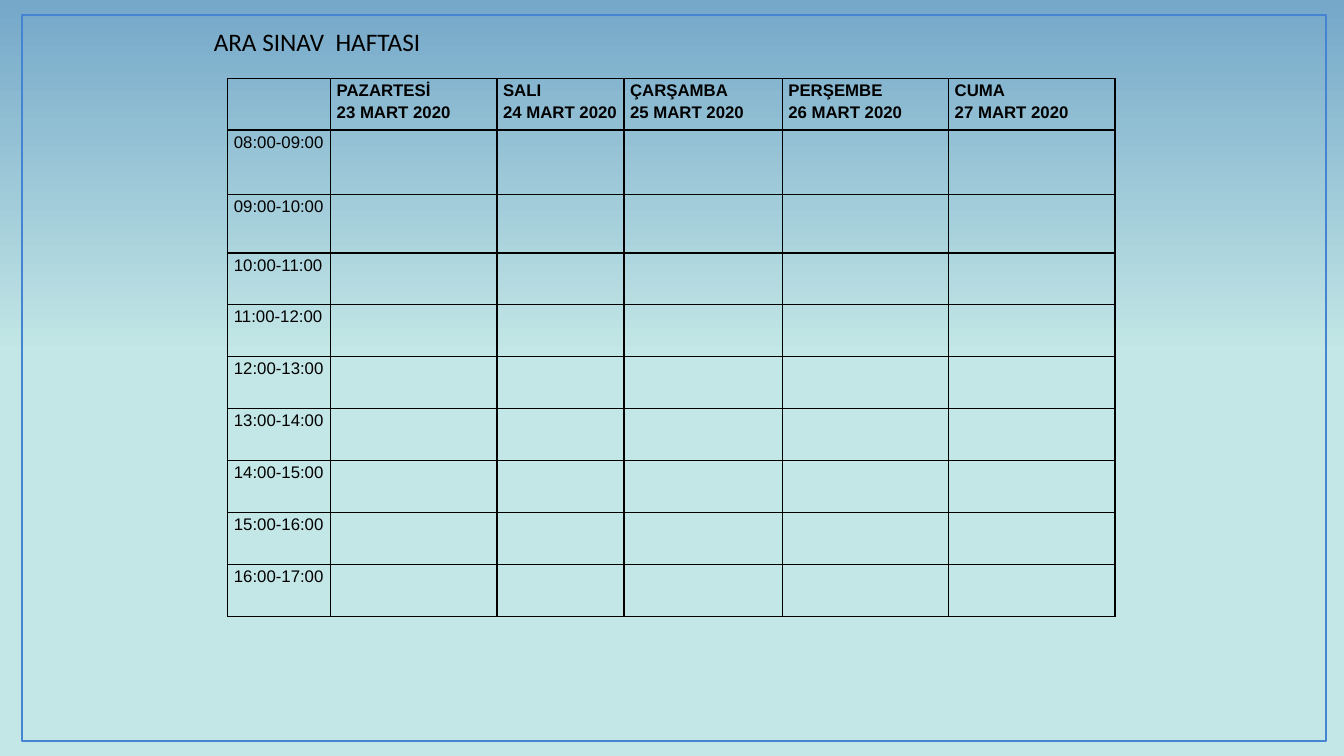
from pptx import Presentation
from pptx.dml.color import RGBColor
from pptx.enum.shapes import MSO_SHAPE as Shape
from pptx.enum.text import MSO_ANCHOR as Anchor, MSO_AUTO_SIZE as Fit, PP_ALIGN as Align
from pptx.oxml import parse_xml
from pptx.oxml.ns import nsdecls
from pptx.util import Inches, Pt

DAYS = ["PAZARTESİ", "SALI", "ÇARŞAMBA", "PERŞEMBE", "CUMA"]
FIRST_DAY = 23
HOURS = range(8, 17)
COLS = [1.02, 1.65, 1.26, 1.57, 1.65, 1.65]
ROWS = [0.51, 0.64, 0.58] + [0.515] * 7


def rgb(code):
    return RGBColor.from_string(code)


def add_run(para, text, font, size, bold=False):
    run = para.add_run()
    run.text = text
    run.font.name = font
    run.font.size = Pt(size)
    run.font.bold = bold
    run.font.color.rgb = rgb("000000")


def paint_back(slide):
    fill = slide.background.fill
    fill.gradient()
    fill.gradient_angle = 90
    stops = [(0.53, "C3E7E6"), (1, "75A8C9")]
    for stop, (place, code) in zip(fill.gradient_stops, stops):
        stop.position = place
        stop.color.rgb = rgb(code)


def add_frame(slide):
    frame = slide.shapes.add_shape(
        Shape.RECTANGLE, Inches(0.22), Inches(0.15), Inches(12.93), Inches(7.2))
    frame.shadow.inherit = False
    frame.fill.background()
    frame.line.color.rgb = rgb("4584D3")
    frame.line.width = Pt(1.5)


def set_title(slide, text):
    title = slide.shapes.title
    title.left, title.top = Inches(2.02), Inches(0.21)
    title.width, title.height = Inches(2.27), Inches(0.4)
    frame = title.text_frame
    frame.word_wrap = False
    frame.auto_size = Fit.NONE
    frame.vertical_anchor = Anchor.TOP
    para = frame.paragraphs[0]
    para.alignment = Align.LEFT
    add_run(para, text, "Calibri", 18)


def set_borders(cell):
    props = cell._tc.get_or_add_tcPr()
    for spot, side in enumerate(["lnL", "lnR", "lnT", "lnB"]):
        props.insert(spot, parse_xml(
            f'<a:{side} {nsdecls("a")} w="{Pt(1)}"><a:solidFill>'
            f'<a:srgbClr val="000000"/></a:solidFill></a:{side}>'))


def fill_cell(cell, lines, bold=False):
    cell.margin_left = cell.margin_right = Inches(0.06)
    cell.margin_top = cell.margin_bottom = 0
    frame = cell.text_frame
    for i, line in enumerate(lines):
        para = frame.add_paragraph() if i else frame.paragraphs[0]
        para.line_spacing = 1.15
        add_run(para, line, "Arial", 12, bold)


def add_plan(slide):
    table = slide.shapes.add_table(
        len(ROWS), len(COLS), Inches(2.26), Inches(0.78),
        Inches(sum(COLS)), Inches(sum(ROWS))).table
    table.horz_banding = False
    for col, width in zip(table.columns, COLS):
        col.width = Inches(width)
    for row, height in zip(table.rows, ROWS):
        row.height = Inches(height)
    for cell in table.iter_cells():
        cell.fill.background()
        set_borders(cell)
    for i, day in enumerate(DAYS):
        fill_cell(table.cell(0, i + 1), [day, f"{FIRST_DAY + i} MART 2020"], True)
    for i, hour in enumerate(HOURS, 1):
        fill_cell(table.cell(i, 0), [f"{hour:02}:00-{hour + 1:02}:00"])


def main():
    deck = Presentation()
    deck.slide_width, deck.slide_height = Inches(13.33), Inches(7.5)
    slide = deck.slides.add_slide(deck.slide_layouts[5])
    paint_back(slide)
    add_frame(slide)
    add_plan(slide)
    set_title(slide, "ARA SINAV  HAFTASI")
    deck.save("out.pptx")


if __name__ == "__main__":
    main()
